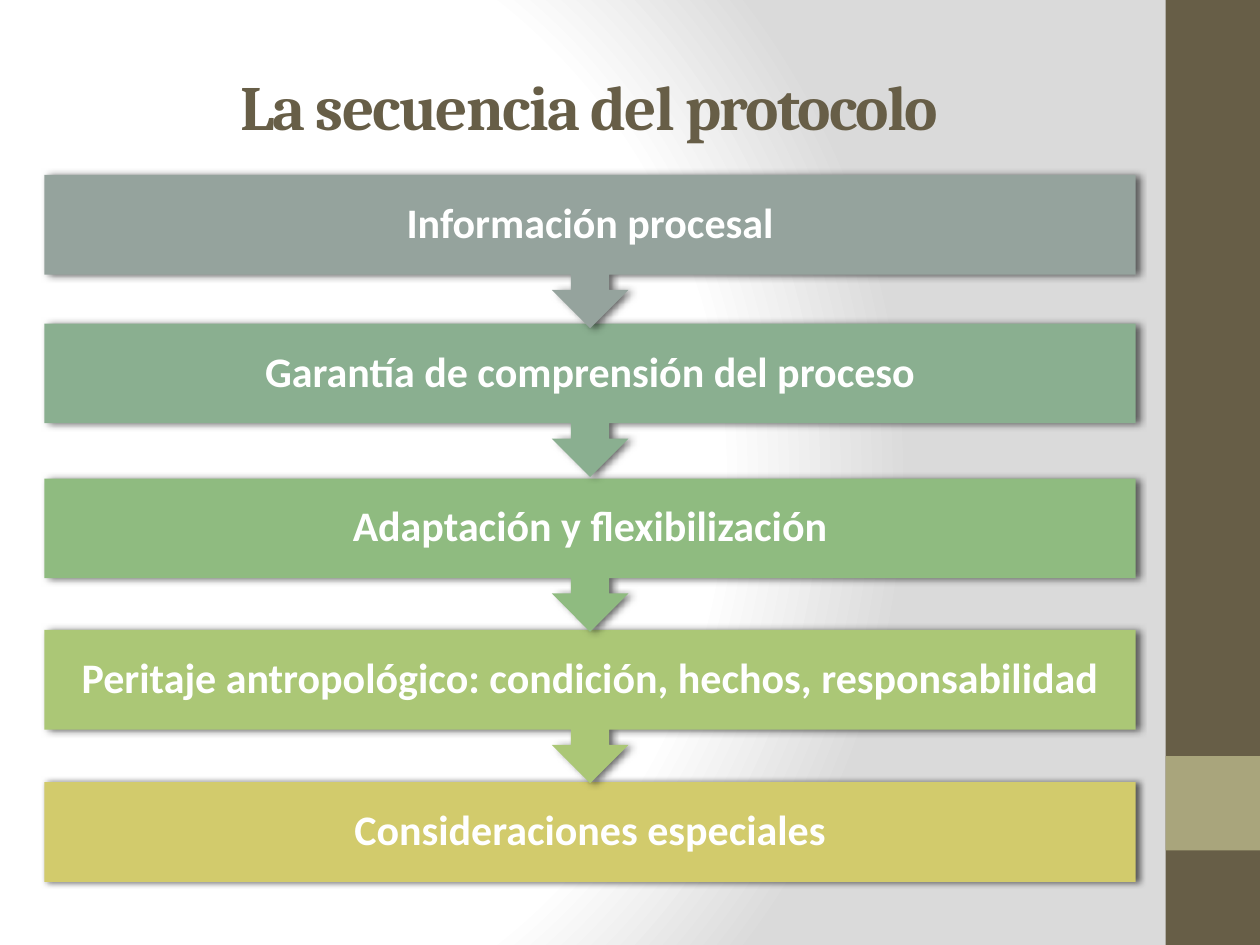
from lxml.etree import SubElement
from pptx import Presentation
from pptx.dml.color import RGBColor
from pptx.enum.shapes import MSO_SHAPE
from pptx.enum.text import MSO_ANCHOR, PP_ALIGN
from pptx.oxml import parse_xml
from pptx.oxml.ns import nsdecls, qn
from pptx.util import Pt

COLORS = {
    "white": "FFFFFF",
    "grey": "DADADA",
    "brown": "675E47",
    "khaki": "A9A57C",
    "slate": "95A39D",
    "teal": "8AAF90",
    "green": "8FBB80",
    "lime": "ABC776",
    "yellow": "D2CB6C",
    "shadow": "000000",
}
STEPS = [
    # text, color, top
    ("Información procesal", "slate", 100),
    ("Garantía de comprensión del proceso", "teal", 185),
    ("Adaptación y flexibilización", "green", 273.5),
    ("Peritaje antropológico: condición, hechos, responsabilidad", "lime", 360),
    ("Consideraciones especiales", "yellow", 447),
]
STEP_LEFT, STEP_WIDTH = 25.4, 623.6
BODY_HEIGHT, CALLOUT_HEIGHT = 56.9, 87.6
STEP_INSET = 13.7
TITLE_FONT = {"name": "Cambria", "size": Pt(36), "bold": True}
STEP_FONT = {"name": "Calibri", "size": Pt(24), "bold": True}


def set_background(slide):
    """Fill the slide with a radial gradient centred left of the middle."""
    slide.background.fill.solid()
    solid_fill = next(slide.element.iter(qn("a:solidFill")))
    stops = "".join(
        f'<a:gs pos="{position * 1000}"><a:srgbClr val="{COLORS[color]}"/></a:gs>'
        for position, color in [(0, "white"), (75, "white"), (100, "grey")]
    )
    gradient = parse_xml(
        f'<a:gradFill {nsdecls("a")} rotWithShape="1"><a:gsLst>{stops}</a:gsLst>'
        '<a:path path="circle">'
        '<a:fillToRect l="20000" t="50000" r="100000" b="50000"/>'
        "</a:path></a:gradFill>"
    )
    solid_fill.getparent().replace(solid_fill, gradient)


def add_block(slide, preset, color, left, top, width, height):
    shape = slide.shapes.add_shape(preset, Pt(left), Pt(top), Pt(width), Pt(height))
    shape.shadow.inherit = False
    shape.fill.solid()
    shape.fill.fore_color.rgb = RGBColor.from_string(COLORS[color])
    shape.line.fill.background()
    return shape


def write_text(shape, text, font_format, color, line_spacing=1.0):
    """Write one centred line and return its run."""
    frame = shape.text_frame
    frame.word_wrap = True
    frame.vertical_anchor = MSO_ANCHOR.MIDDLE
    paragraph = frame.paragraphs[0]
    paragraph.alignment = PP_ALIGN.CENTER
    paragraph.line_spacing = line_spacing
    run = paragraph.add_run()
    run.text = text
    for name, value in font_format.items():
        setattr(run.font, name, value)
    run.font.color.rgb = RGBColor.from_string(COLORS[color])
    return run


def add_shadow(shape):
    effects = shape.element.spPr.find(qn("a:effectLst"))
    shadow = SubElement(
        effects, qn("a:outerShdw"), blurRad=str(Pt(4)), dist=str(Pt(2)),
        dir="0", rotWithShape="0",
    )
    color = SubElement(shadow, qn("a:srgbClr"), val=COLORS["shadow"])
    SubElement(color, qn("a:alpha"), val="60000")


def add_title(slide, text):
    box = slide.shapes.add_textbox(Pt(36.7), Pt(15), Pt(600), Pt(90))
    run = write_text(box, text, TITLE_FONT, "brown")
    run.font._element.set("spc", "-100")


def add_step(slide, text, color, top, is_last):
    preset = MSO_SHAPE.RECTANGLE if is_last else MSO_SHAPE.DOWN_ARROW_CALLOUT
    height = BODY_HEIGHT if is_last else CALLOUT_HEIGHT
    shape = add_block(slide, preset, color, STEP_LEFT, top, STEP_WIDTH, height)
    add_shadow(shape)
    for side in ("left", "top", "right", "bottom"):
        setattr(shape.text_frame, f"margin_{side}", Pt(STEP_INSET))
    write_text(shape, text, STEP_FONT, "white", line_spacing=0.9)


def main():
    presentation = Presentation()
    presentation.slide_width, presentation.slide_height = Pt(720), Pt(540)
    slide = presentation.slides.add_slide(presentation.slide_layouts[6])
    set_background(slide)
    add_block(slide, MSO_SHAPE.RECTANGLE, "brown", 666, 0, 54, 540)
    add_block(slide, MSO_SHAPE.RECTANGLE, "khaki", 666, 432, 54, 54)
    add_title(slide, "La secuencia del protocolo")
    # Drawn from the bottom up, so each arrow tip lies over the next step.
    for step in reversed(STEPS):
        add_step(slide, *step, is_last=step is STEPS[-1])
    presentation.save("out.pptx")


if __name__ == "__main__":
    main()
